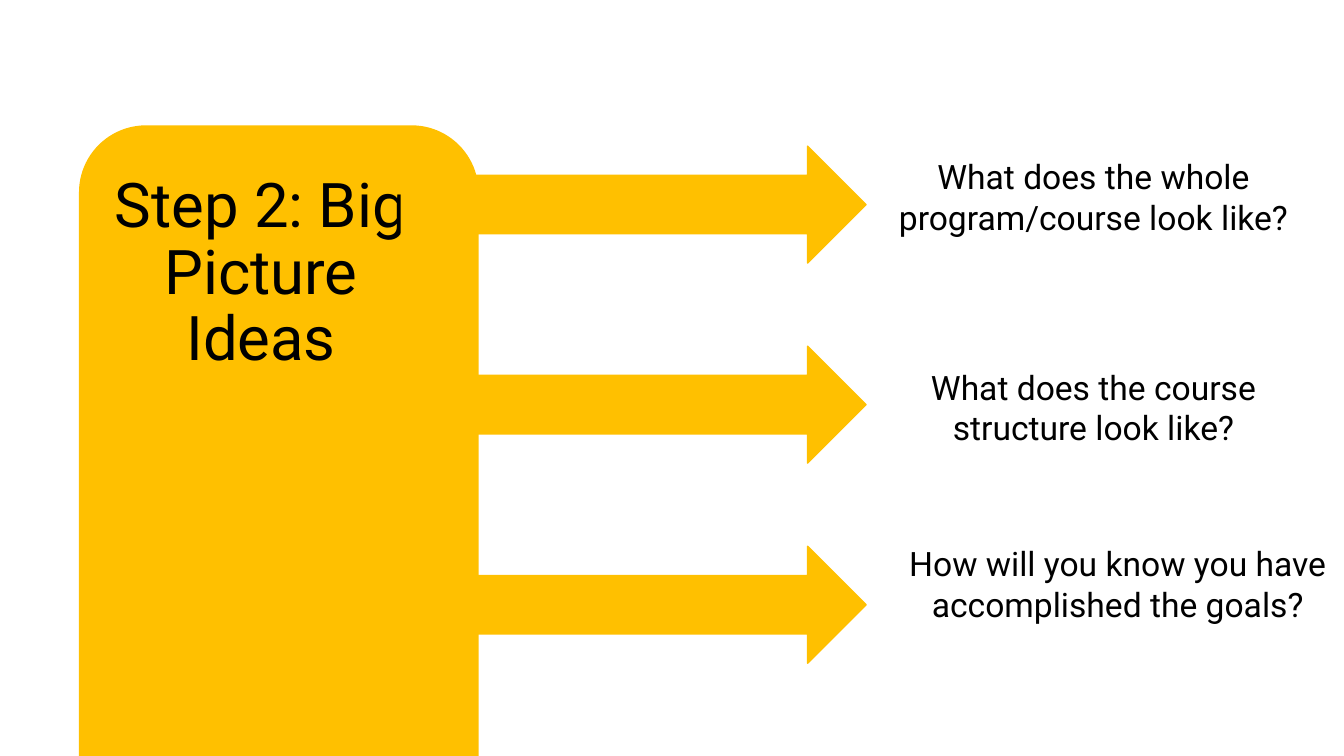
from pptx import Presentation
from pptx.dml.color import RGBColor
from pptx.enum import shapes, text
from pptx.util import Inches, Pt

# Content: each question with its left and top in inches
HEADING = "Step 2: Big Picture Ideas"
QUESTIONS = [
    ("What does the whole program/course look like?", 8.6, 1.5),
    ("What does the course structure look like?", 8.6, 3.59),
    ("How will you know you have accomplished the goals?", 8.84, 5.34),
]

AMBER = RGBColor(0xFF, 0xC0, 0x00)
BLACK = RGBColor(0x00, 0x00, 0x00)
FONT = "Roboto"

# Layout in inches
SLIDE_W, SLIDE_H = 13.33, 7.5
PANEL = (0.79, 1.25, 3.95, 7.51)
HEADING_BOX = (1.04, 1.68, 3.1, 1.45)
ARROW_LEFT, ARROW_TOP, ARROW_W, ARROW_H = 3.98, 1.45, 4.61, 1.16
ARROW_STEP = 1.985
QUESTION_W, QUESTION_H = 4.49, 1.31


def add_amber(slide, kind, box):
    amber = slide.shapes.add_shape(kind, *map(Inches, box))
    amber.shadow.inherit = False
    amber.fill.solid()
    amber.fill.fore_color.rgb = AMBER
    amber.line.color.rgb = AMBER
    amber.line.width = Pt(1)
    return amber


def write(holder, words, size, spacing=1.0):
    frame = holder.text_frame
    frame.word_wrap = True
    frame.auto_size = text.MSO_AUTO_SIZE.NONE
    frame.vertical_anchor = text.MSO_ANCHOR.TOP
    paragraph = frame.paragraphs[0]
    paragraph.alignment = text.PP_ALIGN.CENTER
    paragraph.line_spacing = spacing
    run = paragraph.add_run()
    run.text = words
    run.font.name = FONT
    run.font.size = Pt(size)
    run.font.color.rgb = BLACK


def main():
    deck = Presentation()
    deck.slide_width, deck.slide_height = Inches(SLIDE_W), Inches(SLIDE_H)
    slide = deck.slides.add_slide(deck.slide_layouts[5])

    # Panel behind the heading
    heading = slide.shapes.title
    panel = add_amber(slide, shapes.MSO_SHAPE.ROUNDED_RECTANGLE, PANEL)
    heading._element.addprevious(panel._element)
    heading.left, heading.top, heading.width, heading.height = map(Inches, HEADING_BOX)
    write(heading, HEADING, 44, 0.9)

    # One arrow for each question
    for row, (question, left, top) in enumerate(QUESTIONS):
        arrow_top = ARROW_TOP + row * ARROW_STEP
        add_amber(slide, shapes.MSO_SHAPE.RIGHT_ARROW,
                  (ARROW_LEFT, arrow_top, ARROW_W, ARROW_H))
        box = slide.shapes.add_textbox(
            *map(Inches, (left, top, QUESTION_W, QUESTION_H)))
        write(box, question, 24)

    deck.save("out.pptx")


if __name__ == "__main__":
    main()
